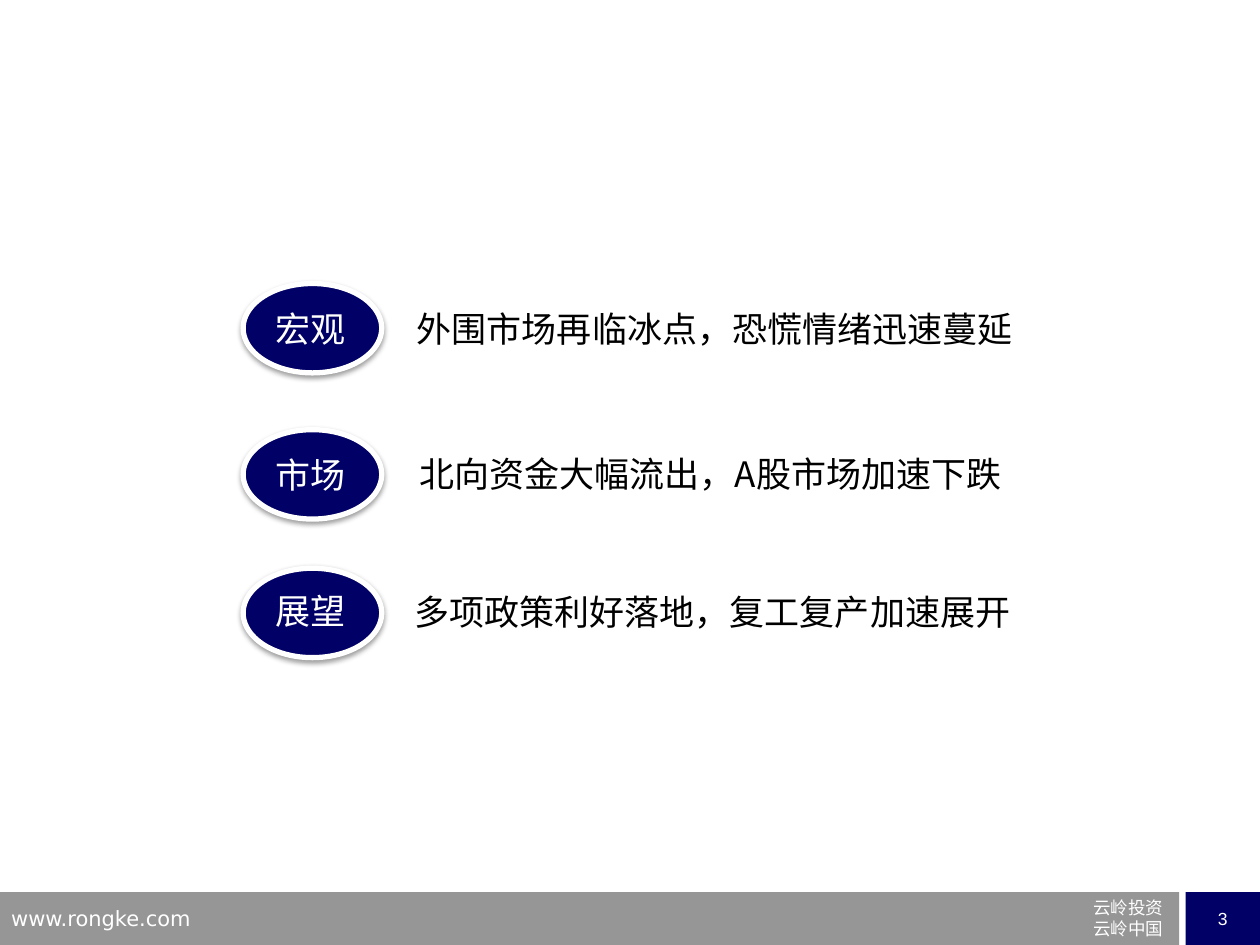
"""Build the agenda slide: three labelled topics above a footer band."""
from lxml.etree import SubElement
from pptx import Presentation
from pptx.dml.color import RGBColor
from pptx.enum.shapes import MSO_SHAPE
from pptx.enum.text import MSO_ANCHOR, MSO_AUTO_SIZE, PP_ALIGN
from pptx.oxml.ns import qn
from pptx.util import Inches, Pt

NAVY = RGBColor(0x00, 0x00, 0x66)
GREY = RGBColor(0x96, 0x96, 0x96)
WHITE = RGBColor(0xFF, 0xFF, 0xFF)
BLACK = RGBColor(0x00, 0x00, 0x00)

WIDTH, HEIGHT = Inches(10), Inches(7.5)
COLUMN, ROW = WIDTH / 100, HEIGHT / 75

TOPIC_FONT = "Noto Sans CJK SC"
FOOTER_FONT = "DejaVu Sans"
TOPICS = [
    ("宏观", "外围市场再临冰点，恐慌情绪迅速蔓延", 22.5, 23.9, (32.1, 23.9, 49.4)),
    ("市场", "北向资金大幅流出，A股市场加速下跌", 34.1, 35.5, (32.3, 35.4, 48.4)),
    ("展望", "多项政策利好落地，复工复产加速展开", 45.1, 46.3, (31.9, 46.4, 49.4)),
]


def grid(left, top, width, height):
    """Turn grid columns and rows into slide lengths."""
    return [round(n * step) for n, step in
            zip((left, top, width, height), (COLUMN, ROW, COLUMN, ROW))]


def write(frame, text, size, font, color, align=PP_ALIGN.LEFT):
    """Fill a text frame and format its runs."""
    frame.text = text
    for paragraph in frame.paragraphs:
        paragraph.alignment = align
        for run in paragraph.runs:
            run.font.size = Pt(size)
            run.font.name = font
            run.font.color.rgb = color
            east_asian = SubElement(run.font._element, qn("a:ea"), typeface=font)
            run.font._element.find(qn("a:latin")).addnext(east_asian)


def add_text(slide, area, text, size, font, color, align=PP_ALIGN.LEFT):
    """Add a wrapped text box."""
    box = slide.shapes.add_textbox(*grid(*area))
    box.text_frame.word_wrap = True
    write(box.text_frame, text, size, font, color, align)
    return box


def add_block(slide, kind, area, fill):
    """Add a filled shape without outline or shadow."""
    block = slide.shapes.add_shape(kind, *grid(*area))
    block.fill.solid()
    block.fill.fore_color.rgb = fill
    block.line.fill.background()
    block.shadow.inherit = False
    return block


def add_badge(slide, top):
    """Add a navy oval with a white rim and a soft shadow below."""
    badge = add_block(slide, MSO_SHAPE.OVAL, (19.3, top, 11, 7.1), NAVY)
    badge.line.color.rgb = WHITE
    badge.line.width = Pt(3)
    effects = badge._element.spPr.find(qn("a:effectLst"))
    shadow = SubElement(effects, qn("a:outerShdw"), blurRad=str(Pt(3.1)),
                        dist=str(Pt(1.6)), dir="5400000", rotWithShape="0")
    shade = SubElement(shadow, qn("a:srgbClr"), val=str(BLACK))
    SubElement(shade, qn("a:alpha"), val="38000")


def add_topic(slide, label, sentence, badge_top, label_top, sentence_place):
    """Add one topic: badge, label and sentence."""
    add_badge(slide, badge_top)
    label_area = (20.9, label_top, 7.9, 4.4)
    for area, text, color in ((label_area, label, WHITE),
                              ((*sentence_place, 4.4), sentence, BLACK)):
        box = add_text(slide, area, text, 20, TOPIC_FONT, color)
        box.text_frame.auto_size = MSO_AUTO_SIZE.SHAPE_TO_FIT_TEXT


def add_footer(slide):
    """Add the footer band with address, firm name and page number."""
    add_block(slide, MSO_SHAPE.RECTANGLE, (0, 70.8, 93.6, 4.2), GREY)
    add_text(slide, (-0.1, 71.4, 24.1, 2.6), "www.rongke.com", 12, FOOTER_FONT, WHITE)
    add_text(slide, (82.1, 70.7, 11.2, 4.5), "云岭投资\n云岭中国", 10,
             FOOTER_FONT, WHITE, PP_ALIGN.RIGHT)
    page = add_block(slide, MSO_SHAPE.RECTANGLE, (94.1, 70.8, 5.9, 4.2), NAVY)
    page.text_frame.word_wrap = False
    page.text_frame.vertical_anchor = MSO_ANCHOR.MIDDLE
    write(page.text_frame, "3", 10, "Arial", WHITE, PP_ALIGN.CENTER)


def main():
    """Build and save the slide."""
    presentation = Presentation()
    presentation.slide_width, presentation.slide_height = WIDTH, HEIGHT
    slide = presentation.slides.add_slide(presentation.slide_layouts[6])
    add_footer(slide)
    for topic in TOPICS:
        add_topic(slide, *topic)
    presentation.save("out.pptx")


if __name__ == "__main__":
    main()
